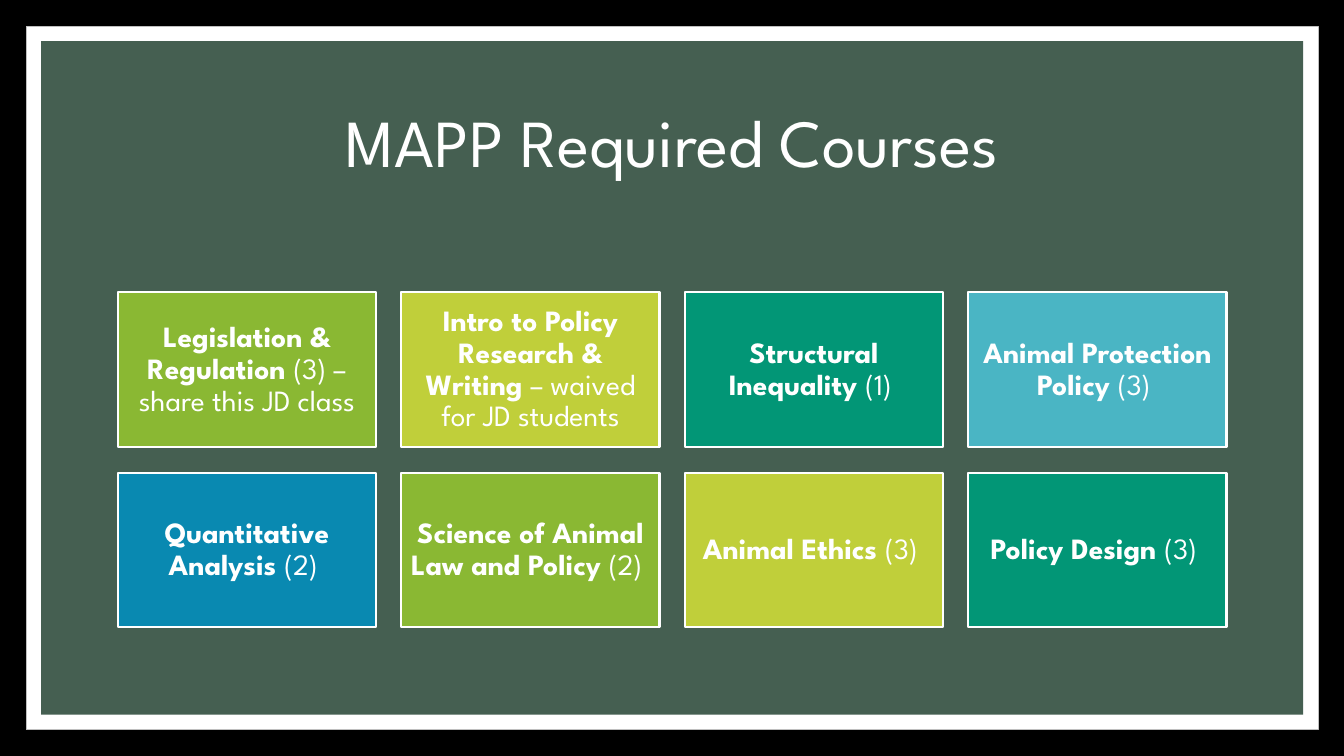
from pptx import Presentation
from pptx.dml.color import RGBColor
from pptx.enum import shapes, text
from pptx.util import Cm, Pt

FONT = "League Spartan"
BLACK = RGBColor(0x00, 0x00, 0x00)
WHITE = RGBColor(0xFF, 0xFF, 0xFF)
GREY = RGBColor(0xBF, 0xBF, 0xBF)
FOREST = RGBColor(0x45, 0x5F, 0x51)
GREEN = RGBColor(0x8A, 0xB8, 0x33)
LIME = RGBColor(0xC0, 0xCF, 0x3A)
TEAL = RGBColor(0x02, 0x96, 0x76)
AQUA = RGBColor(0x4A, 0xB5, 0xC4)
BLUE = RGBColor(0x09, 0x89, 0xB1)

COLUMNS = 4
COURSES = [
    ("Legislation & Regulation ", "(3) – share this JD class"),
    ("Intro to Policy Research & Writing ", "– waived for JD students"),
    ("Structural Inequality ", "(1) "),
    ("Animal Protection Policy ", "(3) "),
    ("Quantitative Analysis ", "(2) "),
    ("Science of Animal Law and Policy ", "(2) "),
    ("Animal Ethics ", "(3) "),
    ("Policy Design ", "(3) "),
]
CARD_FILLS = [GREEN, LIME, TEAL, AQUA, BLUE]


def add_rect(slide, x, y, w, h, fill, line=None, weight=0):
    sp = slide.shapes.add_shape(
        shapes.MSO_SHAPE.RECTANGLE, Cm(x), Cm(y), Cm(w), Cm(h))
    sp.shadow.inherit = False
    sp.fill.solid()
    sp.fill.fore_color.rgb = fill
    if line is None:
        sp.line.fill.background()
    else:
        sp.line.color.rgb = line
        sp.line.width = Pt(weight)
    return sp


def write(sp, runs, size, inset=None):
    """Centre one paragraph in sp; runs is a list of (text, bold)."""
    tf = sp.text_frame
    tf.word_wrap = True
    tf.vertical_anchor = text.MSO_ANCHOR.MIDDLE
    if inset is not None:
        tf.margin_left = tf.margin_right = Cm(inset)
        tf.margin_top = tf.margin_bottom = Cm(inset)
    p = tf.paragraphs[0]
    p.alignment = text.PP_ALIGN.CENTER
    p.line_spacing = 0.9
    for words, bold in runs:
        r = p.add_run()
        r.text = words
        r.font.name = FONT
        r.font.size = Pt(size)
        r.font.bold = bold
        r.font.color.rgb = WHITE


def add_frame(slide, x, y, w, h, border):
    add_rect(slide, x, y, w, h, WHITE, GREY, 0.5)
    add_rect(slide, x + border, y + border, w - 2 * border, h - 2 * border, FOREST)


def add_title(slide, x, y, w, h):
    sp = slide.shapes.add_textbox(Cm(x), Cm(y), Cm(w), Cm(h))
    write(sp, [("MAPP Required Courses", False)], size=48)


def add_courses(slide, x, y, w, h, gap):
    rows = len(COURSES) // COLUMNS
    card_w = (w - gap * (COLUMNS - 1)) / COLUMNS
    card_h = (h - gap * (rows - 1)) / rows
    for i, (name, detail) in enumerate(COURSES):
        row, col = divmod(i, COLUMNS)
        sp = add_rect(slide, x + col * (card_w + gap), y + row * (card_h + gap),
                      card_w, card_h, CARD_FILLS[i % len(CARD_FILLS)], WHITE, 1.5)
        write(sp, [(name, True), (detail, False)], size=21, inset=0.23)


def main():
    prs = Presentation()
    prs.slide_width, prs.slide_height = Cm(33.87), Cm(19.05)
    slide = prs.slides.add_slide(prs.slide_layouts[6])

    # Black surround with a white frame
    slide.background.fill.solid()
    slide.background.fill.fore_color.rgb = BLACK
    add_frame(slide, 0.66, 0.66, 32.56, 17.73, border=0.38)

    # Heading and course cards
    add_title(slide, 2.97, 1.78, 27.94, 3.81)
    add_courses(slide, 2.97, 7.37, 27.94, 8.44, gap=0.64)

    prs.save("out.pptx")


if __name__ == "__main__":
    main()
